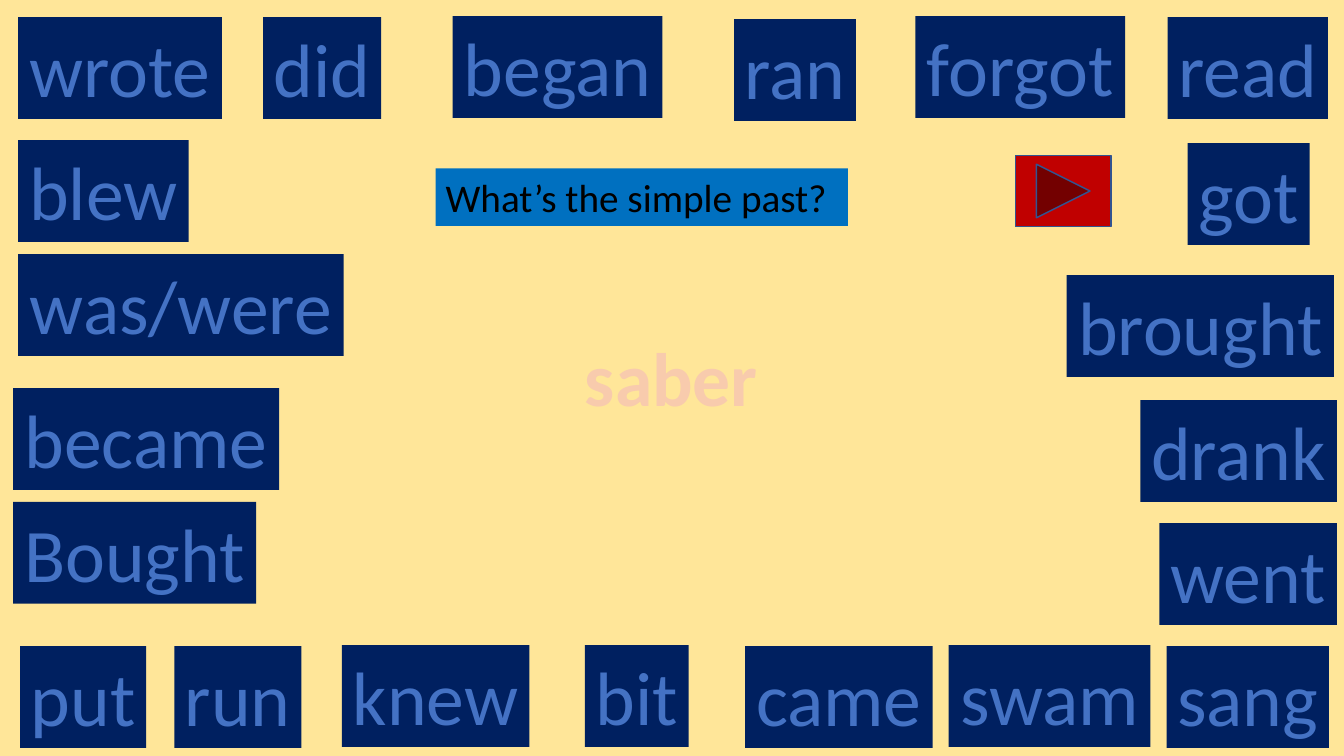
import typing
import pptx
import pptx.dml.color
import pptx.enum.shapes
import pptx.enum.text
import pptx.util

Inches = pptx.util.Inches
Align = pptx.enum.text.PP_ALIGN
Fit = pptx.enum.text.MSO_AUTO_SIZE
HIGH = 1.01


class Tile(typing.NamedTuple):
    word: str
    left: float
    top: float
    width: float
    shade: str = "4472C4"
    back: str = "002060"
    bold: bool = False


TILES = [
    Tile("wrote", 0.18, 0.17, 2.02),
    Tile("did", 2.61, 0.17, 1.17),
    Tile("began", 4.49, 0.16, 2.08),
    Tile("ran", 7.28, 0.19, 1.21),
    Tile("forgot", 9.08, 0.16, 2.08),
    Tile("read", 11.58, 0.17, 1.59),
    Tile("blew", 0.18, 1.39, 1.69),
    Tile("was/were", 0.18, 2.52, 3.23),
    Tile("became", 0.13, 3.85, 2.64),
    Tile("Bought", 0.13, 4.98, 2.41),
    Tile("got", 11.78, 1.42, 1.21),
    Tile("brought", 10.58, 2.73, 2.65),
    Tile("drank", 11.31, 3.97, 1.95),
    Tile("went", 11.5, 5.19, 1.76),
    Tile("put", 0.2, 6.41, 1.25),
    Tile("run", 1.73, 6.41, 1.26),
    Tile("knew", 3.39, 6.4, 1.86),
    Tile("bit", 5.8, 6.4, 1.03),
    Tile("came", 7.39, 6.41, 1.86),
    Tile("swam", 9.41, 6.4, 2),
    Tile("sang", 11.57, 6.41, 1.61),
    Tile("saber", 5.7, 3.23, 1.92, shade="F8CBAD", back="", bold=True),
]


def paint(fill, shade: str) -> None:
    fill.solid()
    fill.fore_color.rgb = pptx.dml.color.RGBColor.from_string(shade)


def write(shape, text: str, *, size: float, shade: str, align, fit,
          wrap: bool = False, bold: bool = False) -> None:
    frame = shape.text_frame
    frame.text = text
    frame.word_wrap = wrap
    frame.auto_size = fit
    frame.vertical_anchor = pptx.enum.text.MSO_ANCHOR.TOP
    line = frame.paragraphs[0]
    line.alignment = align
    font = line.runs[0].font
    font.name = "Calibri"
    font.size = pptx.util.Pt(size)
    font.bold = bold
    paint(font.fill, shade)


def place(shape, left: float, top: float, width: float, height: float) -> None:
    shape.left, shape.top = Inches(left), Inches(top)
    shape.width, shape.height = Inches(width), Inches(height)


def draw(slide, tile: Tile) -> None:
    box = slide.shapes.add_textbox(
        Inches(tile.left), Inches(tile.top), Inches(tile.width), Inches(HIGH)
    )
    if tile.back:
        paint(box.fill, tile.back)
    write(box, tile.word, size=54, shade=tile.shade, align=Align.CENTER,
          fit=Fit.SHAPE_TO_FIT_TEXT, bold=tile.bold)


def main() -> None:
    deck = pptx.Presentation()
    deck.slide_width, deck.slide_height = Inches(13.33), Inches(7.5)
    slide = deck.slides.add_slide(deck.slide_layouts[5])
    paint(slide.background.fill, "FFE699")

    title = slide.shapes.title
    place(title, 4.32, 1.67, 4.09, 0.57)
    paint(title.fill, "0070C0")
    write(title, "What’s the simple past?", size=28, shade="000000",
          align=Align.LEFT, fit=Fit.NONE, wrap=True)

    kind = pptx.enum.shapes.MSO_SHAPE.ACTION_BUTTON_FORWARD_OR_NEXT
    button = slide.shapes.add_shape(
        kind, Inches(10.07), Inches(1.54), Inches(0.95), Inches(0.71)
    )
    button.shadow.inherit = False
    paint(button.fill, "C00000")
    paint(button.line.fill, "325491")
    button.line.width = pptx.util.Pt(1)

    for tile in TILES:
        draw(slide, tile)
    deck.save("out.pptx")


if __name__ == "__main__":
    main()
